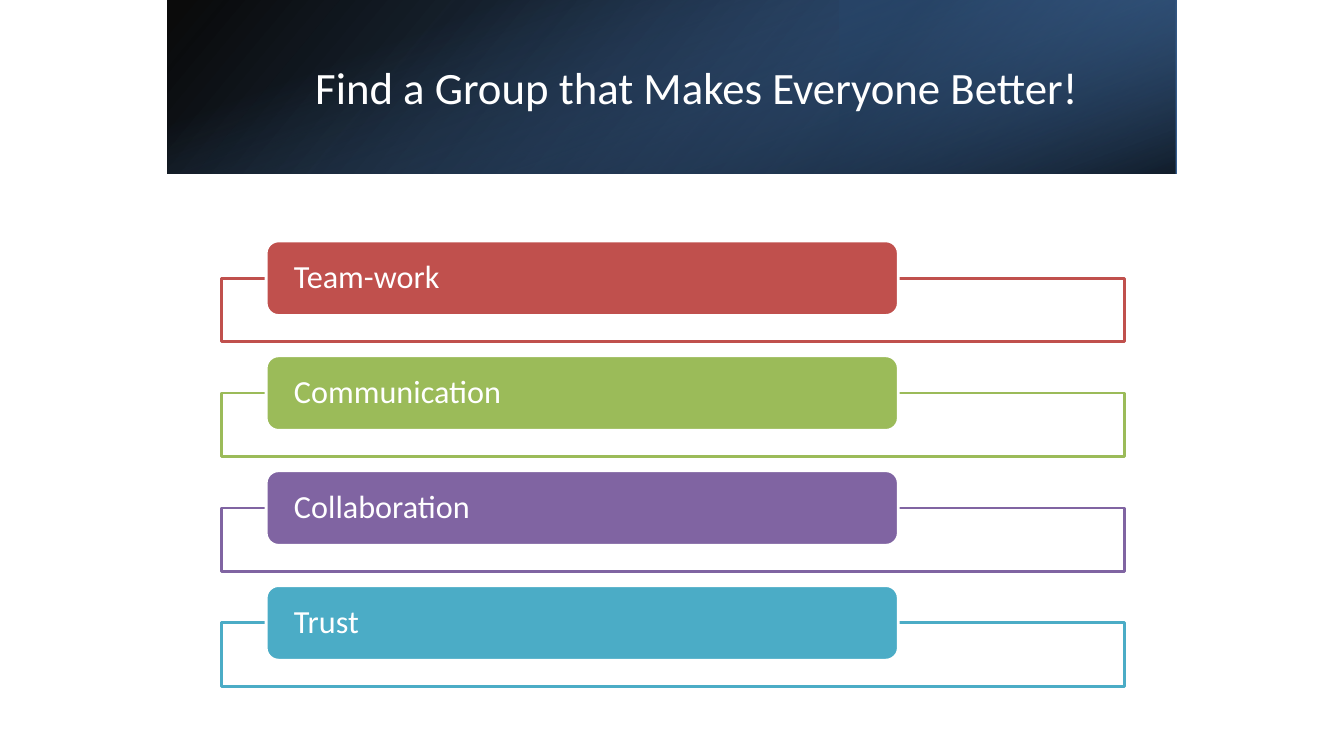
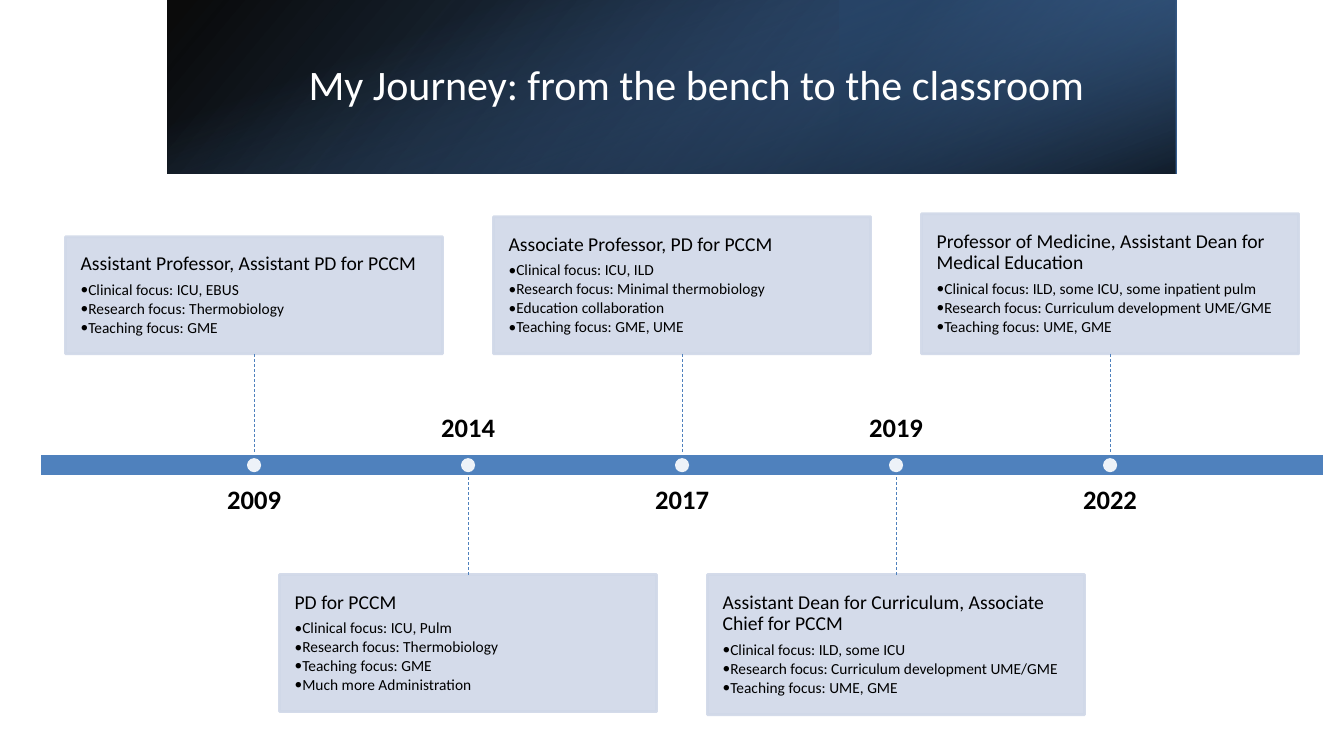
from lxml import etree
from pptx import Presentation
from pptx.dml.color import RGBColor
from pptx.enum.dml import MSO_LINE
from pptx.enum.shapes import MSO_CONNECTOR, MSO_SHAPE
from pptx.enum.text import MSO_ANCHOR as Anchor, PP_ALIGN as Align
from pptx.oxml.ns import qn
from pptx.util import Inches, Pt

FONT = "Calibri"
WHITE, BLACK, BLUE, CARD = "FFFFFF", "000000", "4F81BD", "D0D8E8"
SLIDE_WIDTH, SLIDE_HEIGHT = 13.33, 7.5
HEADER_WIDTH, HEADER_HEIGHT = 10, 1.72
HEADER_LEFT = (SLIDE_WIDTH - HEADER_WIDTH) / 2

# Header layers: box, rotation, mirrored, angle, stops of (position %, colour, opacity %)
HEADER_LAYERS = [
    ((HEADER_LEFT, 0, HEADER_WIDTH, HEADER_HEIGHT), 0, True, 140,
     [(0, BLACK, 96), (100, "376092", 100)]),
    ((8.33, 0, 3.33, HEADER_HEIGHT), 180, True, 320,
     [(19, "254061", 68), (100, BLUE, 79)]),
    ((5.8, -4.14, HEADER_HEIGHT, HEADER_WIDTH), 90, False, 340,
     [(23, BLUE, 0), (99, BLACK, 74)]),
]
TITLE_BOX = (2.79, 0.38, 8.24, 0.96)

GROUP_TITLE = "Find a Group that Makes Everyone Better!"
QUALITIES = [
    ("Team-work", "C0504D"),
    ("Communication", "9BBB59"),
    ("Collaboration", "8064A2"),
    ("Trust", "4BACC6"),
]

JOURNEY_TITLE = "My Journey: from the bench to the classroom"
# Year, card height, role, focus points; cards alternate above and below the bar
MILESTONES = [
    ("2009", 1.16, "Assistant Professor, Assistant PD for PCCM",
     ["Clinical focus: ICU, EBUS",
      "Research focus: Thermobiology",
      "Teaching focus: GME"]),
    ("2014", 1.36, "PD for PCCM",
     ["Clinical focus: ICU, Pulm",
      "Research focus: Thermobiology",
      "Teaching focus: GME",
      "Much more Administration"]),
    ("2017", 1.36, "Associate Professor, PD for PCCM",
     ["Clinical focus: ICU, ILD",
      "Research focus: Minimal thermobiology",
      "Education collaboration",
      "Teaching focus: GME, UME"]),
    ("2019", 1.39, "Assistant Dean for Curriculum, Associate Chief for PCCM",
     ["Clinical focus: ILD, some ICU",
      "Research focus: Curriculum development UME/GME",
      "Teaching focus: UME, GME"]),
    ("2022", 1.39, "Professor of Medicine, Assistant Dean for Medical Education",
     ["Clinical focus: ILD, some ICU, some inpatient pulm",
      "Research focus: Curriculum development UME/GME",
      "Teaching focus: UME, GME"]),
]


def rgb(color):
    return RGBColor.from_string(color)


def inches(box):
    return [Inches(value) for value in box]


def set_opacities(shape, opacities):
    """Give the shape's colours, in order, these opacities in percent."""
    colors = list(shape._element.spPr.iter(qn("a:srgbClr")))
    for color, opacity in zip(colors, opacities):
        if opacity < 100:
            etree.SubElement(color, qn("a:alpha"), val=str(opacity * 1000))


def add_box(slide, kind, box, fill, line=None, opacities=()):
    shape = slide.shapes.add_shape(kind, *inches(box))
    shape.shadow.inherit = False
    shape.fill.solid()
    shape.fill.fore_color.rgb = rgb(fill)
    if line:
        shape.line.color.rgb = rgb(line)
        shape.line.width = Pt(2)
    else:
        shape.line.fill.background()
    set_opacities(shape, opacities)
    return shape


def set_frame(shape, anchor, margins):
    frame = shape.text_frame
    frame.word_wrap = True
    frame.vertical_anchor = anchor
    (frame.margin_left, frame.margin_top,
     frame.margin_right, frame.margin_bottom) = inches(margins)
    return frame


def write(paragraph, text, size, color, align=Align.LEFT, bold=False,
          spacing=0.9, after=0.0):
    paragraph.alignment = align
    paragraph.line_spacing = spacing
    paragraph.space_after = Pt(after)
    run = paragraph.add_run()
    run.text = text
    run.font.name = FONT
    run.font.size = Pt(size)
    run.font.bold = bold
    run.font.color.rgb = rgb(color)


def add_bullet(paragraph):
    properties = paragraph._p.get_or_add_pPr()
    properties.set("marL", str(Inches(0.06)))
    properties.set("indent", str(Inches(-0.06)))
    etree.SubElement(properties, qn("a:buFont"), typeface=FONT)
    etree.SubElement(properties, qn("a:buChar"), char="•")


def add_header_layer(slide, box, rotation, mirrored, angle, stops):
    shape = slide.shapes.add_shape(MSO_SHAPE.RECTANGLE, *inches(box))
    shape.shadow.inherit = False
    shape.rotation = rotation
    if mirrored:
        shape._element.spPr.find(qn("a:xfrm")).set("flipH", "1")
    shape.line.fill.background()
    shape.fill.gradient()
    shape.fill.gradient_angle = 360 - angle
    for stop, (position, color, _) in zip(shape.fill.gradient_stops, stops):
        stop.position = position / 100
        stop.color.rgb = rgb(color)
    set_opacities(shape, [opacity for _, _, opacity in stops])


def add_titled_slide(presentation, title, size, spacing):
    slide = presentation.slides.add_slide(presentation.slide_layouts[6])
    for layer in HEADER_LAYERS:
        add_header_layer(slide, *layer)
    text_box = slide.shapes.add_textbox(*inches(TITLE_BOX))
    frame = set_frame(text_box, Anchor.MIDDLE, (0.1, 0.05, 0.1, 0.05))
    write(frame.paragraphs[0], title, size, WHITE, Align.CENTER, spacing=spacing)
    return slide


def build_group_slide(presentation):
    slide = add_titled_slide(presentation, GROUP_TITLE, 32, 1.0)
    for index, (quality, color) in enumerate(QUALITIES):
        top = 2.39 + index * 1.14
        add_box(slide, MSO_SHAPE.RECTANGLE, (2.2, top + 0.37, 8.95, 0.63),
                WHITE, color, [90])
        label = add_box(slide, MSO_SHAPE.ROUNDED_RECTANGLE, (2.64, top, 6.27, 0.74),
                        color, WHITE)
        frame = set_frame(label, Anchor.MIDDLE, (0.24, 0, 0.24, 0))
        write(frame.paragraphs[0], quality, 23, WHITE)


def add_card(slide, box, role, points):
    card = add_box(slide, MSO_SHAPE.RECTANGLE, box, CARD, CARD, [90, 90])
    frame = set_frame(card, Anchor.MIDDLE, (0.15,) * 4)
    write(frame.paragraphs[0], role, 14, BLACK, after=5)
    for point in points:
        paragraph = frame.add_paragraph()
        add_bullet(paragraph)
        write(paragraph, point, 11, BLACK, after=1.65)
    return card


def add_dashed_line(slide, x, start, end):
    line = slide.shapes.add_connector(
        MSO_CONNECTOR.STRAIGHT, *inches((x, start, x, end)))
    line.line.color.rgb = rgb(BLUE)
    line.line.width = Pt(0.5)
    line.line.dash_style = MSO_LINE.DASH
    etree.SubElement(line._element.spPr, qn("a:effectLst"))
    return line


def build_journey_slide(presentation):
    first, last = 2.52, 11.01
    step = (last - first) / (len(MILESTONES) - 1)
    middle = (first + last) / 2
    bar_top, bar_height, bar_width = 4.5, 0.23, 12.75
    bar_bottom = bar_top + bar_height
    card_width, upper_edge, lower_edge = 3.74, 3.51, 5.7
    year_width, year_height, year_gap = 3.4, 0.65, 0.1
    dot = 0.14

    slide = add_titled_slide(presentation, JOURNEY_TITLE, 30, 0.9)
    bar = add_box(slide, MSO_SHAPE.RECTANGLE,
                  (middle - bar_width / 2, bar_top, bar_width, bar_height), BLUE, WHITE)
    for index, (year, height, role, points) in enumerate(MILESTONES):
        x = first + index * step
        above = index % 2 == 0
        if above:
            bar_edge, card_edge = bar_top, upper_edge
            card_top, year_top = card_edge - height, bar_bottom + year_gap
            card_side, bar_side, year_anchor = 2, 0, Anchor.TOP
        else:
            bar_edge, card_edge = bar_bottom, lower_edge
            card_top, year_top = card_edge, bar_top - year_gap - year_height
            card_side, bar_side, year_anchor = 0, 2, Anchor.BOTTOM

        year_box = slide.shapes.add_textbox(
            *inches((x - year_width / 2, year_top, year_width, year_height)))
        frame = set_frame(year_box, year_anchor, (0,) * 4)
        write(frame.paragraphs[0], year, 19, BLACK, Align.CENTER, bold=True)

        card = add_card(slide, (x - card_width / 2, card_top, card_width, height),
                        role, points)
        line = add_dashed_line(slide, x, card_edge, bar_edge)
        line.begin_connect(card, card_side)
        if index == len(MILESTONES) // 2:
            line.end_connect(bar, bar_side)
        add_box(slide, MSO_SHAPE.OVAL,
                (x - dot / 2, bar_top + (bar_height - dot) / 2, dot, dot),
                WHITE, opacities=[90])


def main():
    presentation = Presentation()
    presentation.slide_width = Inches(SLIDE_WIDTH)
    presentation.slide_height = Inches(SLIDE_HEIGHT)
    build_group_slide(presentation)
    build_journey_slide(presentation)
    presentation.save("out.pptx")


if __name__ == "__main__":
    main()
